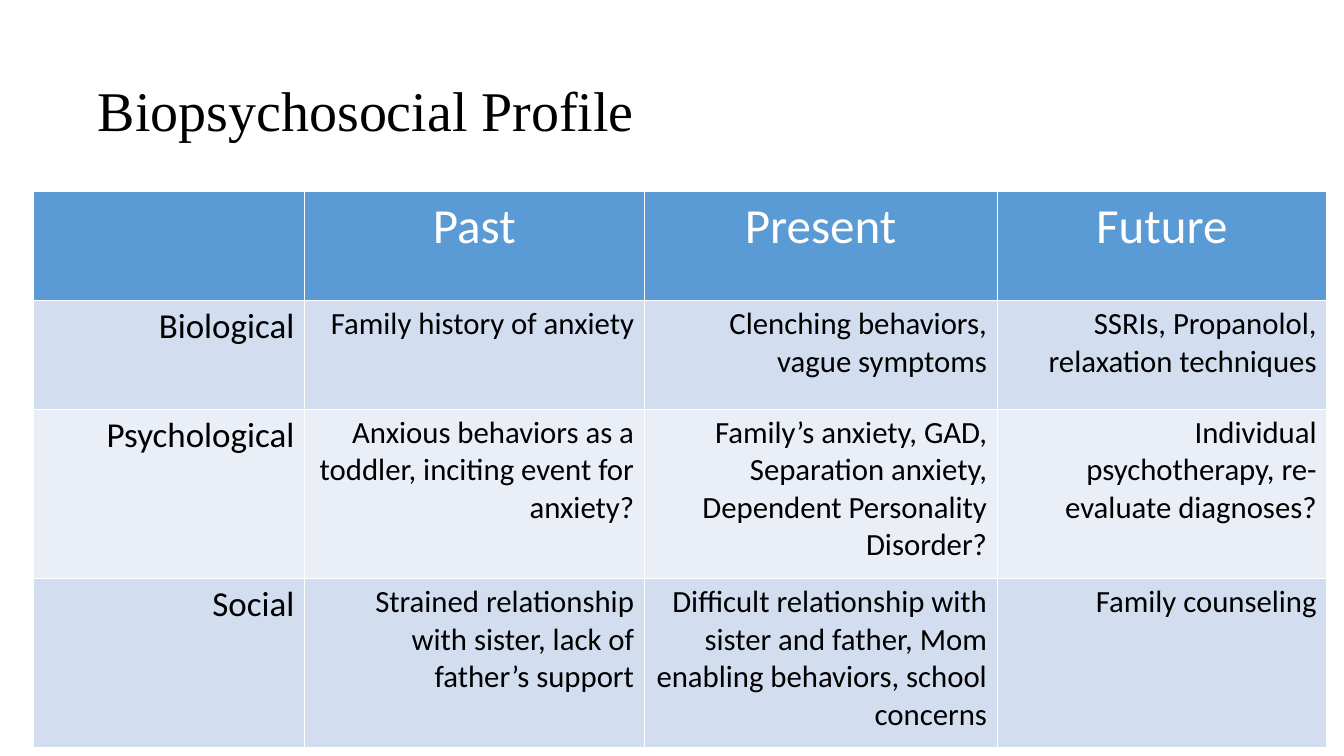
from pptx import Presentation
from pptx.dml.color import RGBColor
from pptx.enum.text import MSO_ANCHOR, PP_ALIGN
from pptx.util import Inches, Pt

# Content
TITLE = "Biopsychosocial Profile"
PROFILE = [
    ("", "Past", "Present", "Future"),
    ("Biological", "Family history of anxiety", "Clenching behaviors, vague symptoms",
     "SSRIs, Propanolol, relaxation techniques"),
    ("Psychological", "Anxious behaviors as a toddler, inciting event for anxiety?",
     "Family’s anxiety, GAD, Separation anxiety, Dependent Personality Disorder?",
     "Individual psychotherapy, re-evaluate diagnoses?"),
    ("Social", "Strained relationship with sister, lack of father’s support",
     "Difficult relationship with sister and father, Mom enabling behaviors, school concerns",
     "Family counseling"),
]
COLUMN_WIDTHS = [2.69, 3.37, 3.5, 3.27]
ROW_HEIGHTS = [1.08, 1.08, 1.68, 1.68]
COLORS = {"header": "5B9BD5", "odd": "D2DEEF", "even": "EAEFF7",
          "light": "FFFFFF", "dark": "000000"}


def color(name):
    return RGBColor.from_string(COLORS[name])


def format_text(paragraph, font_name, size, color_name, alignment):
    paragraph.alignment = alignment
    for run in paragraph.runs:
        run.font.name = font_name
        run.font.size = Pt(size)
        run.font.bold = False
        run.font.color.rgb = color(color_name)


presentation = Presentation()
presentation.slide_width = Inches(13.33)
presentation.slide_height = Inches(7.5)
slide = presentation.slides.add_slide(presentation.slide_layouts[6])

# Title
title_box = slide.shapes.add_textbox(Inches(0.92), Inches(0.4), Inches(11.5), Inches(1.45))
title_frame = title_box.text_frame
title_frame.word_wrap = True
title_frame.vertical_anchor = MSO_ANCHOR.MIDDLE
title_frame.margin_left = title_frame.margin_right = Inches(0.05)
title_frame.text = TITLE
title_frame.paragraphs[0].line_spacing = 0.9
format_text(title_frame.paragraphs[0], "Times New Roman", 40, "dark", PP_ALIGN.LEFT)

# Profile table; its default style draws the white cell borders
table = slide.shapes.add_table(
    len(PROFILE), len(COLUMN_WIDTHS), Inches(0.33), Inches(1.9),
    Inches(sum(COLUMN_WIDTHS)), Inches(sum(ROW_HEIGHTS))).table
for column, width in zip(table.columns, COLUMN_WIDTHS):
    column.width = Inches(width)
for row, height in zip(table.rows, ROW_HEIGHTS):
    row.height = Inches(height)

for row_index, texts in enumerate(PROFILE):
    for column_index, text in enumerate(texts):
        cell = table.cell(row_index, column_index)
        cell.text_frame.text = text
        if row_index == 0:
            fill, size, text_color, alignment = "header", 35, "light", PP_ALIGN.CENTER
        else:
            fill = "odd" if row_index % 2 else "even"
            size = 25 if column_index == 0 else 22
            text_color, alignment = "dark", PP_ALIGN.RIGHT
        cell.fill.solid()
        cell.fill.fore_color.rgb = color(fill)
        format_text(cell.text_frame.paragraphs[0], "Calibri", size, text_color, alignment)

presentation.save("out.pptx")
